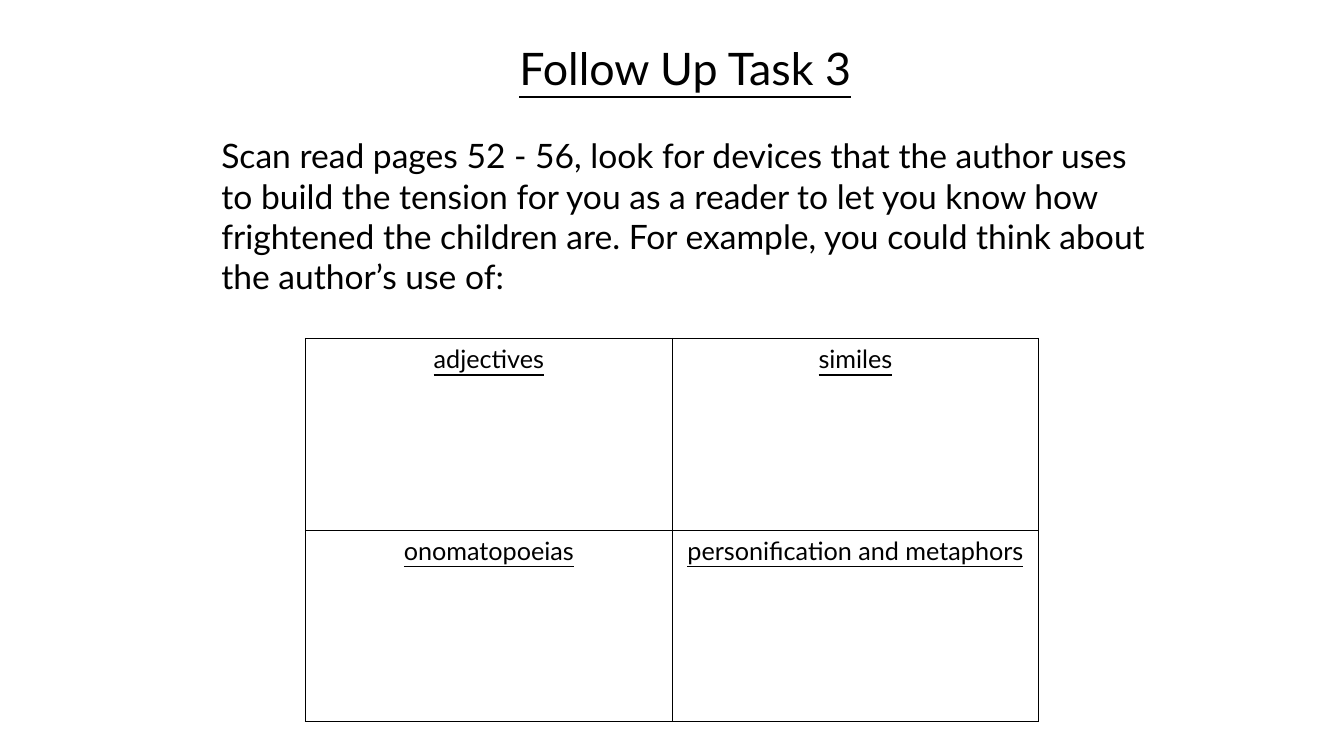
from lxml.etree import SubElement
from pptx import Presentation
from pptx.dml.color import RGBColor
from pptx.enum.text import PP_ALIGN
from pptx.oxml.ns import qn
from pptx.util import Cm, Pt

TITLE = "Follow Up Task 3"
TASK = (
    "Scan read pages 52 - 56, look for devices that the author uses to build "
    "the tension for you as a reader to let you know how frightened the "
    "children are. For example, you could think about the author’s use of:"
)
DEVICES = [
    ["adjectives", "similes"],
    ["onomatopoeias", "personification and metaphors"],
]
COLOURS = {"ink": "000000", "paper": "FFFFFF"}
FONT = "Lato"

SLIDE_WIDTH, SLIDE_HEIGHT = Cm(33.87), Cm(19.05)
INTRO_BOX = Cm(5.33), Cm(0.91), Cm(23.88), Cm(7.77)
GRID_LEFT, GRID_TOP = Cm(7.7), Cm(8.53)
COLUMN_WIDTH, ROW_HEIGHT = Cm(9.24), Cm(4.83)


def write(paragraph, text, size, underline=False, align=PP_ALIGN.LEFT, after=0):
    paragraph.alignment = align
    paragraph.space_after = Pt(after)
    run = paragraph.add_run()
    run.text = text
    run.font.name = FONT
    run.font.size = Pt(size)
    run.font.underline = underline
    run.font.color.rgb = RGBColor.from_string(COLOURS["ink"])


def outline(cell):
    """Draw a thin line on all four sides; borders must precede the fill."""
    properties = cell._tc.get_or_add_tcPr()
    for side in ("a:lnL", "a:lnR", "a:lnT", "a:lnB"):
        line = SubElement(properties, qn(side), w=str(Pt(1)))
        fill = SubElement(line, qn("a:solidFill"))
        SubElement(fill, qn("a:srgbClr"), val=COLOURS["ink"])


def add_intro(slide):
    frame = slide.shapes.add_textbox(*INTRO_BOX).text_frame
    frame.word_wrap = True
    write(frame.paragraphs[0], TITLE, 32, underline=True,
          align=PP_ALIGN.CENTER, after=28.8)
    write(frame.add_paragraph(), TASK, 24)


def add_device_grid(slide):
    rows, columns = len(DEVICES), len(DEVICES[0])
    grid = slide.shapes.add_table(
        rows, columns, GRID_LEFT, GRID_TOP,
        COLUMN_WIDTH * columns, ROW_HEIGHT * rows,
    ).table
    grid.first_row = False
    grid.horz_banding = False
    for r, devices in enumerate(DEVICES):
        for c, device in enumerate(devices):
            cell = grid.cell(r, c)
            outline(cell)
            cell.fill.solid()
            cell.fill.fore_color.rgb = RGBColor.from_string(COLOURS["paper"])
            write(cell.text_frame.paragraphs[0], device, 18,
                  underline=True, align=PP_ALIGN.CENTER)


def main():
    deck = Presentation()
    deck.slide_width, deck.slide_height = SLIDE_WIDTH, SLIDE_HEIGHT
    slide = deck.slides.add_slide(deck.slide_layouts[6])
    add_intro(slide)
    add_device_grid(slide)
    deck.save("out.pptx")


if __name__ == "__main__":
    main()
